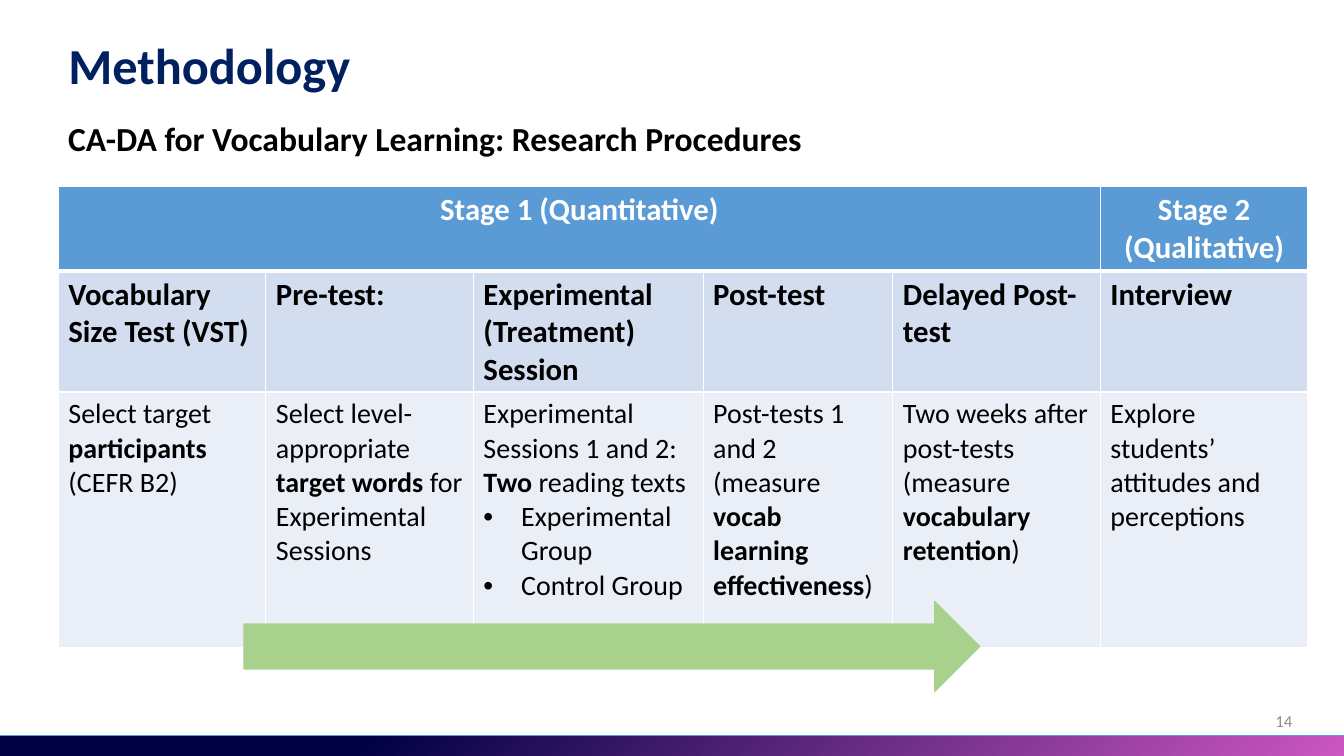
from dataclasses import dataclass

from lxml import etree
from pptx import Presentation
from pptx.dml.color import RGBColor
from pptx.enum.shapes import MSO_SHAPE
from pptx.enum.text import MSO_ANCHOR, MSO_AUTO_SIZE, PP_ALIGN
from pptx.oxml.ns import qn
from pptx.util import Cm, Pt

RECT, ARROW = MSO_SHAPE.RECTANGLE, MSO_SHAPE.RIGHT_ARROW
TOP, MIDDLE = MSO_ANCHOR.TOP, MSO_ANCHOR.MIDDLE
LEFT, CENTER, RIGHT = PP_ALIGN.LEFT, PP_ALIGN.CENTER, PP_ALIGN.RIGHT
NO_FIT = MSO_AUTO_SIZE.NONE

FONT = "Calibri"
COLORS = {
    "navy": "002060", "black": "000000", "white": "FFFFFF", "gray": "8C8C8C",
    "blue": "5B9BD5", "label": "D2DEEF", "detail": "EAEFF7",
    "arrow": "A9D18E", "band_dark": "000044", "band_pink": "CE57C1",
}


@dataclass
class Run:
    text: str
    bold: bool = False


@dataclass
class Para:
    runs: list[Run]
    bullet: bool = False


@dataclass
class Style:
    size: float
    color: str
    align: PP_ALIGN = LEFT
    line_spacing: float = 1.0


@dataclass
class Step:
    width: float
    label: str
    details: list[Para]


@dataclass
class Box:
    left: float
    top: float
    width: float
    height: float

    def emu(self) -> tuple:
        return Cm(self.left), Cm(self.top), Cm(self.width), Cm(self.height)


STEPS = [
    Step(5.23, "Vocabulary Size Test (VST)", [
        Para([Run("Select target "), Run("participants", True), Run(" (CEFR B2)")])]),
    Step(5.23, "Pre-test:", [
        Para([Run("Select level-appropriate "), Run("target words ", True),
              Run("for Experimental Sessions")])]),
    Step(5.79, "Experimental (Treatment) Session", [
        Para([Run("Experimental Sessions 1 and 2: "), Run("Two", True), Run(" reading texts")]),
        Para([Run("Experimental Group")], bullet=True),
        Para([Run("Control Group")], bullet=True)]),
    Step(4.78, "Post-test", [
        Para([Run("Post-tests 1 and 2 (measure "),
              Run("vocab learning effectiveness", True), Run(")")])]),
    Step(5.23, "Delayed Post-test", [
        Para([Run("Two weeks after post-tests (measure "),
              Run("vocabulary retention", True), Run(")")])]),
    Step(5.23, "Interview", [Para([Run("Explore students’ attitudes and perceptions")])]),
]
STAGES = {0: "Stage 1 (Quantitative)", 5: "Stage 2 (Qualitative)"}
ROW_HEIGHTS = [2.13, 3.0, 6.43]
ROW_FILLS = ["blue", "label", "detail"]


def rgb(name: str) -> RGBColor:
    return RGBColor.from_string(COLORS[name])


def add_bullet(p) -> None:
    pPr = p._p.get_or_add_pPr()
    pPr.set("marL", str(Cm(0.95)))
    pPr.set("indent", str(-Cm(0.95)))
    etree.SubElement(pPr, qn("a:buFont")).set("typeface", "Arial")
    etree.SubElement(pPr, qn("a:buChar")).set("char", "•")


def write(tf, paras: list[Para], style: Style) -> None:
    tf.word_wrap = True
    for i, para in enumerate(paras):
        p = tf.add_paragraph() if i else tf.paragraphs[0]
        p.alignment = style.align
        p.line_spacing = style.line_spacing
        if para.bullet:
            add_bullet(p)
        for run in para.runs:
            r = p.add_run()
            r.text = run.text
            r.font.name = FONT
            r.font.size = Pt(style.size)
            r.font.bold = run.bold
            r.font.color.rgb = rgb(style.color)


def bold_line(text: str) -> list[Para]:
    return [Para([Run(text, True)])]


def add_text(s, box: Box, paras: list[Para], style: Style, anchor=TOP) -> None:
    tf = s.shapes.add_textbox(*box.emu()).text_frame
    tf.vertical_anchor = anchor
    write(tf, paras, style)


def add_shape(s, kind, box: Box, line: str, line_width: float):
    sp = s.shapes.add_shape(kind, *box.emu())
    sp.shadow.inherit = False
    sp.line.color.rgb = rgb(line)
    sp.line.width = Pt(line_width)
    return sp


def set_borders(cell, widths: dict[str, float]) -> None:
    tcPr = cell._tc.get_or_add_tcPr()
    for i, (side, width) in enumerate(widths.items()):
        ln = etree.Element(qn(f"a:ln{side}"), w=str(Pt(width)))
        fill = etree.SubElement(ln, qn("a:solidFill"))
        etree.SubElement(fill, qn("a:srgbClr")).set("val", COLORS["white"])
        tcPr.insert(i, ln)


def add_procedure_table(s, box: Box) -> None:
    table = s.shapes.add_table(len(ROW_HEIGHTS), len(STEPS), *box.emu()).table
    table.horz_banding = False
    for row, height in zip(table.rows, ROW_HEIGHTS):
        row.height = Cm(height)
    for col, step in zip(table.columns, STEPS):
        col.width = Cm(step.width)

    # Fills and borders, with a thick rule under the stages
    for i, fill in enumerate(ROW_FILLS):
        for cell in table.rows[i].cells:
            cell.fill.solid()
            cell.fill.fore_color.rgb = rgb(fill)
            set_borders(cell, {"L": 1, "R": 1, "T": 3 if i == 1 else 1, "B": 3 if i == 0 else 1})

    # Stages, then the label and details of each step
    table.cell(0, 0).merge(table.cell(0, 4))
    for j, stage in STAGES.items():
        write(table.cell(0, j).text_frame, bold_line(stage), Style(22, "white", CENTER))
    for j, step in enumerate(STEPS):
        write(table.cell(1, j).text_frame, bold_line(step.label), Style(22, "black"))
        write(table.cell(2, j).text_frame, step.details, Style(20, "black"))


def main() -> None:
    prs = Presentation()
    prs.slide_width, prs.slide_height = Cm(33.87), Cm(19.05)
    s = prs.slides.add_slide(prs.slide_layouts[5])

    # Title
    title = s.shapes.title
    title.left, title.top, title.width, title.height = Box(1.47, 0.91, 22.35, 2.26).emu()
    title.text_frame.auto_size = NO_FIT
    title.text_frame.vertical_anchor = TOP
    write(title.text_frame, bold_line("Methodology"), Style(36, "navy", LEFT, 0.9))

    # Bottom band
    band = add_shape(s, RECT, Box(-0.15, 18.54, 34.02, 0.79), "blue", 0.5)
    band.rotation = 180
    band.fill.gradient()
    band.fill.gradient_angle = 135
    stops = [("band_dark", 0.27), ("band_pink", 1.0)]
    for stop, (color, position) in zip(band.fill.gradient_stops, stops):
        stop.color.rgb = rgb(color)
        stop.position = position

    # Page number
    add_text(s, Box(25.2, 17.65, 7.62, 1.02), [Para([Run("14")])],
             Style(12, "gray", RIGHT), MIDDLE)

    # Procedure table and the arrow across it
    add_procedure_table(s, Box(1.47, 4.7, 31.49, 11.56))
    arrow = add_shape(s, ARROW, Box(6.15, 15.16, 18.54, 2.26), "arrow", 1)
    arrow.fill.solid()
    arrow.fill.fore_color.rgb = rgb("arrow")

    # Subtitle
    add_text(s, Box(1.47, 2.77, 22.66, 1.3),
             bold_line("CA-DA for Vocabulary Learning: Research Procedures"),
             Style(24, "black", LEFT, 1.07))

    prs.save("out.pptx")


if __name__ == "__main__":
    main()
